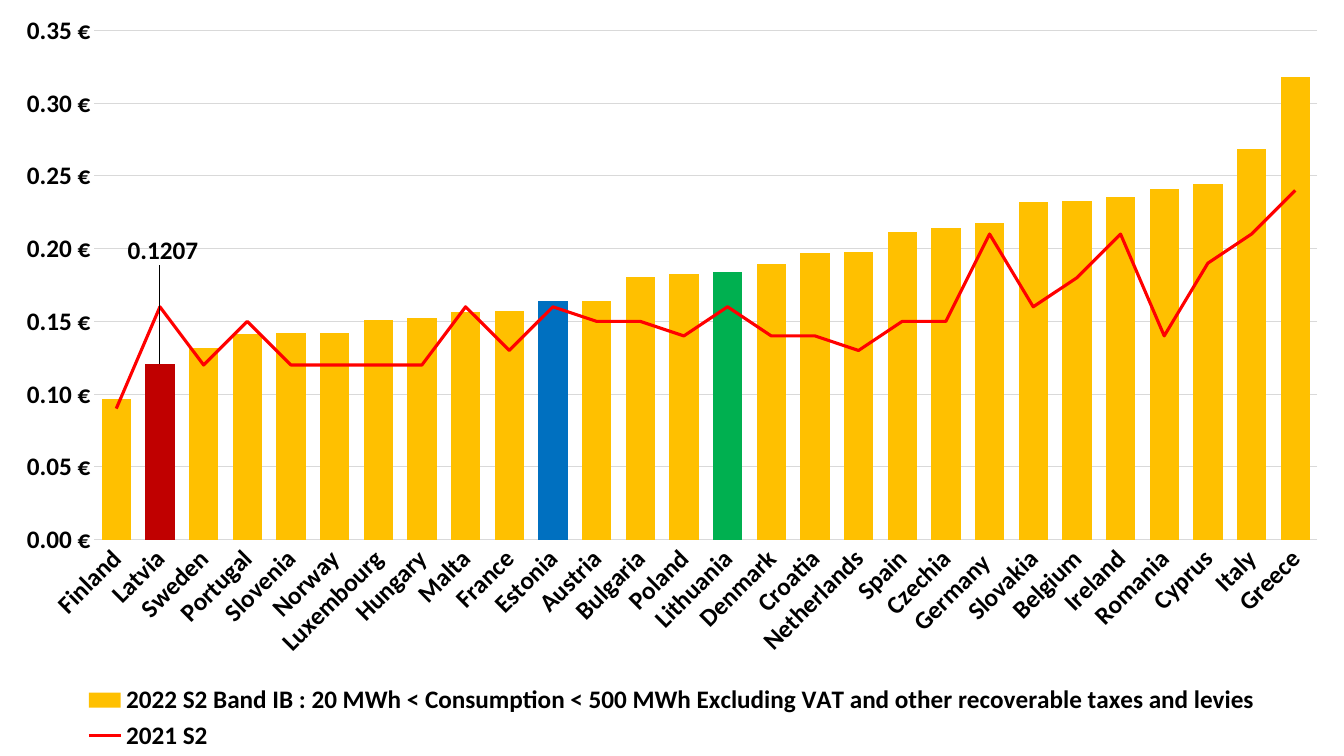
from pptx import Presentation
from pptx.chart.data import CategoryChartData
from pptx.dml.color import RGBColor
from pptx.enum.chart import XL_CHART_TYPE, XL_LEGEND_POSITION, XL_MARKER_STYLE, XL_TICK_MARK
from pptx.oxml import parse_xml
from pptx.oxml.ns import qn
from pptx.util import Inches, Pt

COLUMNS = XL_CHART_TYPE.COLUMN_CLUSTERED
LEGEND_BOTTOM = XL_LEGEND_POSITION.BOTTOM
NO_MARKER = XL_MARKER_STYLE.NONE
NO_TICK = XL_TICK_MARK.NONE

CHART_NS = 'xmlns:c="http://schemas.openxmlformats.org/drawingml/2006/chart"'
DRAWING_NS = 'xmlns:a="http://schemas.openxmlformats.org/drawingml/2006/main"'
CHART_2012_NS = 'xmlns:c15="http://schemas.microsoft.com/office/drawing/2012/chart"'

PRICES_2022_NAME = ("2022 S2 Band IB : 20 MWh < Consumption < 500 MWh "
                    "Excluding VAT and other recoverable taxes and levies")
PRICES_2021_NAME = "2021 S2 "
PRICES = [  # country, 2022 S2, 2021 S2
    ("Finland", 0.0965, 0.09), ("Latvia", 0.1207, 0.16),
    ("Sweden", 0.1319, 0.12), ("Portugal", 0.1415, 0.15),
    ("Slovenia", 0.1421, 0.12), ("Norway", 0.1422, 0.12),
    ("Luxembourg", 0.151, 0.12), ("Hungary", 0.1523, 0.12),
    ("Malta", 0.1564, 0.16), ("France", 0.1569, 0.13),
    ("Estonia", 0.1637, 0.16), ("Austria", 0.1639, 0.15),
    ("Bulgaria", 0.1804, 0.15), ("Poland", 0.1825, 0.14),
    ("Lithuania", 0.1836, 0.16), ("Denmark", 0.1896, 0.14),
    ("Croatia", 0.197, 0.14), ("Netherlands", 0.1979, 0.13),
    ("Spain", 0.2111, 0.15), ("Czechia", 0.2143, 0.15),
    ("Germany ", 0.2174, 0.21), ("Slovakia", 0.2317, 0.16),
    ("Belgium", 0.2328, 0.18), ("Ireland", 0.2353, 0.21),
    ("Romania", 0.2408, 0.14), ("Cyprus", 0.2447, 0.19),
    ("Italy", 0.2687, 0.21), ("Greece", 0.3181, 0.24),
]
COUNTRIES, PRICES_2022, PRICES_2021 = zip(*PRICES)
BALTIC_COLORS = {"Latvia": "C00000", "Estonia": "0070C0", "Lithuania": "00B050"}


def color(hex_code):
    return RGBColor.from_string(hex_code)


def fill_with(target, hex_code):
    target.format.fill.solid()
    target.format.fill.fore_color.rgb = color(hex_code)


def draw_line(line, hex_code, width):
    line.color.rgb = color(hex_code)
    line.width = Pt(width)


class PriceSlide:
    font_name, font_size, text_color = "Calibri", 18, "000000"
    grid_color, bar_color, line_color = "D9D9D9", "FFC000", "FF0000"

    def __init__(self, deck):
        self.width, self.height = deck.slide_width, deck.slide_height
        self.slide = deck.slides.add_slide(deck.slide_layouts[6])

    def style_font(self, font):
        font.name, font.size, font.bold = self.font_name, Pt(self.font_size), True
        font.color.rgb = color(self.text_color)

    def add_price_chart(self):
        data = CategoryChartData()
        data.categories = COUNTRIES
        data.add_series(PRICES_2022_NAME, PRICES_2022)
        data.add_series(PRICES_2021_NAME, PRICES_2021)
        frame = self.slide.shapes.add_chart(COLUMNS, 0, 0, self.width, self.height, data)
        self.chart = frame.chart
        self.chart.has_title = False
        self.style_font(self.chart.font)
        self.chart.has_legend = True
        self.chart.legend.position = LEGEND_BOTTOM
        self.chart.legend.include_in_layout = False
        self.style_font(self.chart.legend.font)

    def style_axes(self):
        countries, prices = self.chart.category_axis, self.chart.value_axis
        for axis in (countries, prices):
            axis.major_tick_mark = axis.minor_tick_mark = NO_TICK
            self.style_font(axis.tick_labels.font)
        draw_line(countries.format.line, self.grid_color, 0.75)
        slant = countries._element.find(qn("c:txPr")).find(qn("a:bodyPr"))
        slant.set("rot", str(-45 * 60000))
        slant.set("vert", "horz")
        prices.minimum_scale, prices.maximum_scale, prices.major_unit = 0, 0.35, 0.05
        prices.tick_labels.number_format = '#,##0.00\\ "€"'
        prices.tick_labels.number_format_is_linked = False
        prices.format.line.fill.background()
        prices.has_major_gridlines = True
        draw_line(prices.major_gridlines.format.line, self.grid_color, 0.75)

    def split_off_line(self):
        """Move the second series from the columns to a line plot on the same axes."""
        columns = self.chart.plots[0]._element
        series = columns.findall(qn("c:ser"))[1]
        line_plot = parse_xml(f'<c:lineChart {CHART_NS}><c:grouping val="standard"/>'
                              '<c:varyColors val="0"/><c:marker val="1"/></c:lineChart>')
        for inversion in series.findall(qn("c:invertIfNegative")):
            series.remove(inversion)
        line_plot.insert(2, series)
        for axis in columns.findall(qn("c:axId")):
            line_plot.append(parse_xml(f'<c:axId {CHART_NS} val="{axis.get("val")}"/>'))
        columns.addnext(line_plot)

    def style_series(self):
        columns, line_plot = self.chart.plots
        columns.gap_width, columns.overlap = 49, -27
        columns.vary_by_categories = False
        bars, line = columns.series[0], line_plot.series[0]
        fill_with(bars, self.bar_color)
        for country, hex_code in BALTIC_COLORS.items():
            fill_with(bars.points[COUNTRIES.index(country)], hex_code)
        draw_line(line.format.line, self.line_color, 2.25)
        line.marker.style = NO_MARKER
        line.smooth = False

    def label_bar(self, country, shift_x, shift_y):
        """Show a bar's value, moved by shares of the chart and tied by a leader line."""
        bars = self.chart.plots[0].series[0]
        self.style_font(bars.points[COUNTRIES.index(country)].data_label.font)
        labels = bars._element.find(qn("c:dLbls"))
        labels.find(qn("c:dLbl")).find(qn("c:idx")).addnext(parse_xml(
            f'<c:layout {CHART_NS}><c:manualLayout><c:x val="{shift_x}"/>'
            f'<c:y val="{shift_y}"/></c:manualLayout></c:layout>'))
        for leader in labels.findall(qn("c:showLeaderLines")):
            labels.remove(leader)
        labels.append(parse_xml(
            f'<c:extLst {CHART_NS} {DRAWING_NS} {CHART_2012_NS}>'
            '<c:ext uri="{CE6537A1-D6FC-4f65-9D91-7224C49458BB}">'
            '<c15:showLeaderLines val="1"/><c15:leaderLines><c:spPr><a:ln w="9525"><a:solidFill>'
            f'<a:srgbClr val="{self.text_color}"/></a:solidFill></a:ln></c:spPr>'
            '</c15:leaderLines></c:ext></c:extLst>'))


def main():
    deck = Presentation()
    deck.slide_width, deck.slide_height = Inches(13.33), Inches(7.5)
    page = PriceSlide(deck)
    page.add_price_chart()
    page.style_axes()
    page.split_off_line()
    page.style_series()
    page.label_bar("Latvia", 1 / 450, -1 / 8)
    deck.save("out.pptx")


if __name__ == "__main__":
    main()
